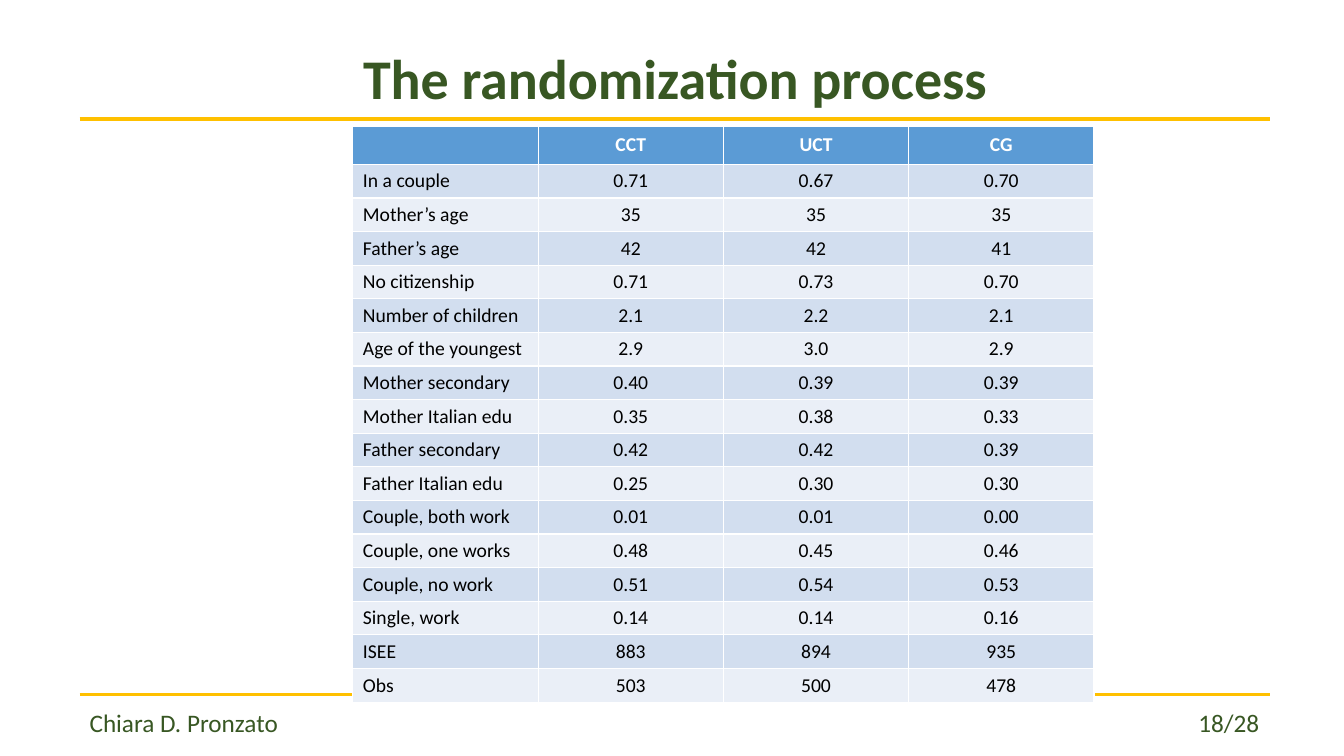
"""Build the slide on the randomization process, with its table of group means."""
from typing import NamedTuple

from lxml import etree
from pptx import Presentation
from pptx import util as u
from pptx.dml.color import RGBColor
from pptx.enum import shapes, text
from pptx.oxml import ns

GREEN = RGBColor(0x38, 0x57, 0x23)
GOLD = RGBColor(0xFF, 0xC0, 0x00)
BLUE = RGBColor(0x5B, 0x9B, 0xD5)
PALE = RGBColor(0xD2, 0xDE, 0xEF)
MIST = RGBColor(0xEA, 0xEF, 0xF7)
WHITE = RGBColor(0xFF, 0xFF, 0xFF)
BLACK = RGBColor(0x00, 0x00, 0x00)

FONT = "Calibri"
LEFT, WIDTH = 0.79, 11.81
RULES = (1.18, 6.89)
ALIGN = text.PP_ALIGN


class Style(NamedTuple):
    size: int
    color: RGBColor
    bold: bool = False


class Row(NamedTuple):
    label: str
    cct: str
    uct: str
    cg: str


TITLE = Style(40, GREEN, True)
FOOT = Style(18, GREEN)
HEAD = Style(14, WHITE, True)
BODY = Style(14, BLACK)

ROWS = [
    Row("", "CCT", "UCT", "CG"),
    Row("In a couple", "0.71", "0.67", "0.70"),
    Row("Mother’s age", "35", "35", "35"),
    Row("Father’s age", "42", "42", "41"),
    Row("No citizenship", "0.71", "0.73", "0.70"),
    Row("Number of children", "2.1", "2.2", "2.1"),
    Row("Age of the youngest", "2.9", "3.0", "2.9"),
    Row("Mother secondary", "0.40", "0.39", "0.39"),
    Row("Mother Italian edu", "0.35", "0.38", "0.33"),
    Row("Father secondary", "0.42", "0.42", "0.39"),
    Row("Father Italian edu", "0.25", "0.30", "0.30"),
    Row("Couple, both work", "0.01", "0.01", "0.00"),
    Row("Couple, one works", "0.48", "0.45", "0.46"),
    Row("Couple, no work", "0.51", "0.54", "0.53"),
    Row("Single, work", "0.14", "0.14", "0.16"),
    Row("ISEE", "883", "894", "935"),
    Row("Obs", "503", "500", "478"),
]


def add_run(para, words: str, style: Style) -> None:
    run = para.add_run()
    run.text = words
    run.font.name = FONT
    run.font.size = u.Pt(style.size)
    run.font.bold = style.bold
    run.font.color.rgb = style.color


def add_box(slide, top: float, height: float):
    box = slide.shapes.add_textbox(
        u.Inches(LEFT), u.Inches(top), u.Inches(WIDTH), u.Inches(height))
    box.text_frame.word_wrap = True
    return box.text_frame


def add_title(slide) -> None:
    frame = add_box(slide, 0.41, 0.8)
    frame.vertical_anchor = text.MSO_ANCHOR.MIDDLE
    para = frame.paragraphs[0]
    para.alignment = ALIGN.CENTER
    para.line_spacing = 0.9
    add_run(para, "The randomization process", TITLE)


def add_foot(slide) -> None:
    para = add_box(slide, 6.97, 0.4).paragraphs[0]
    para.alignment = ALIGN.LEFT
    tabs = etree.SubElement(para._p.get_or_add_pPr(), ns.qn("a:tabLst"))
    etree.SubElement(tabs, ns.qn("a:tab"), pos=str(u.Inches(11.6)), algn="r")
    for words in ("Chiara D. Pronzato", "\t18/28"):
        add_run(para, words, FOOT)


def add_rule(slide, top: float) -> None:
    rule = slide.shapes.add_connector(
        shapes.MSO_CONNECTOR.STRAIGHT, u.Inches(LEFT), u.Inches(top),
        u.Inches(LEFT + WIDTH), u.Inches(top))
    rule.line.color.rgb = GOLD
    rule.line.width = u.Pt(2.25)
    etree.SubElement(rule._element.spPr, ns.qn("a:effectLst"))


def fill_cell(cell, words: str, style: Style, fill: RGBColor, align) -> None:
    cell.fill.solid()
    cell.fill.fore_color.rgb = fill
    cell.margin_top = cell.margin_bottom = u.Inches(0.04)
    cell.vertical_anchor = text.MSO_ANCHOR.MIDDLE
    para = cell.text_frame.paragraphs[0]
    para.alignment = align
    add_run(para, words, style)


def add_grid(slide) -> None:
    grid = slide.shapes.add_table(
        len(ROWS), len(Row._fields), u.Inches(3.5), u.Inches(1.25),
        u.Inches(7.35), u.Inches(5.67)).table
    for i, row in enumerate(ROWS):
        style = BODY if i else HEAD
        fill = (MIST, PALE)[i % 2] if i else BLUE
        for j, words in enumerate(row):
            align = ALIGN.CENTER if j else ALIGN.LEFT
            fill_cell(grid.cell(i, j), words, style, fill, align)


def main() -> None:
    deck = Presentation()
    deck.slide_width, deck.slide_height = u.Inches(13.33), u.Inches(7.5)
    slide = deck.slides.add_slide(deck.slide_layouts[6])
    add_title(slide)
    for top in RULES:
        add_rule(slide, top)
    add_foot(slide)
    add_grid(slide)
    deck.save("out.pptx")


if __name__ == "__main__":
    main()
